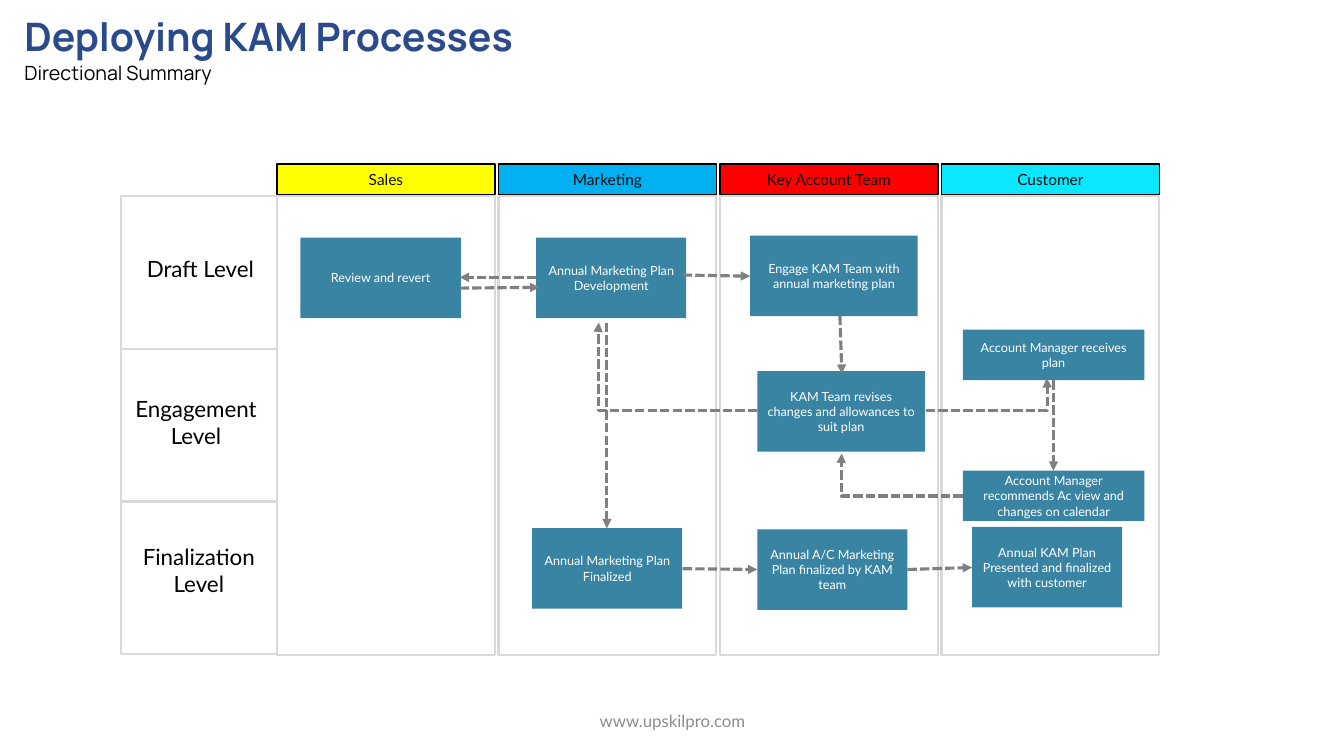
from lxml.etree import SubElement
from pptx import Presentation
from pptx.dml.color import RGBColor
from pptx.enum.dml import MSO_LINE
from pptx.enum.shapes import MSO_CONNECTOR as Connector, MSO_SHAPE as Shape
from pptx.enum.text import MSO_ANCHOR as Anchor, PP_ALIGN as Align
from pptx.oxml.ns import qn
from pptx.util import Cm, Pt

COLORS = {
    "title": "2A4A8B", "black": "000000", "white": "FFFFFF",
    "header_text": "0D0D0D", "footer": "8C8C8C", "grid": "D9D9D9",
    "step": "3984A3", "arrow": "808080", "yellow": "FFFF00",
    "blue": "00B0F0", "red": "FF0000", "cyan": "0AE7FE",
}

LANES = [("Sales", "yellow"), ("Marketing", "blue"),
         ("Key Account Team", "red"), ("Customer", "cyan")]
LANE_LEFT, LANE_PITCH, LANE_WIDTH = 6.98, 5.58, 5.49
LEVEL_LEFT, LEVEL_TOP, LEVEL_PITCH = 3.05, 4.95, 3.85

# Text, then left, top, width, height
LEVELS = [
    ("Draft Level", 3.12, 6.3, 3.86, 0.94),
    ("Engagement Level", 3.05, 9.83, 3.78, 1.63),
    ("Finalization Level", 3.12, 13.56, 3.78, 1.63),
]
STEPS = [
    ("Review and revert", 7.57, 5.99, 4.04, 2.03),
    ("Annual Marketing Plan Development", 13.51, 5.99, 3.78, 2.03),
    ("Engage KAM Team with annual marketing plan", 18.9, 5.94, 4.22, 2.03),
    ("Account Manager receives plan", 24.26, 8.31, 4.57, 1.27),
    ("Account Manager recommends Ac view and changes on calendar",
     24.26, 11.86, 4.57, 1.27),
    ("KAM Team revises changes and allowances to suit plan",
     19.08, 9.35, 4.22, 2.03),
    ("Annual Marketing Plan Finalized", 13.41, 13.31, 3.78, 2.03),
    ("Annual A/C Marketing Plan finalized by KAM team",
     19.08, 13.34, 3.78, 2.03),
    ("Annual KAM Plan Presented and finalized with customer",
     24.49, 13.28, 3.78, 2.03),
]

# Start x, start y, end x, end y
STRAIGHT_ARROWS = [
    (17.2, 6.93, 18.9, 6.96),
    (13.51, 6.99, 11.58, 6.99),
    (11.58, 7.26, 13.59, 7.24),
    (21.16, 7.95, 21.21, 9.42),
    (26.54, 9.58, 26.54, 11.86),
    (15.29, 8.13, 15.29, 13.31),
    (17.2, 14.33, 19.08, 14.35),
    (22.86, 14.35, 24.49, 14.3),
]
BENT_ARROWS = [
    (24.26, 12.5, 21.21, 11.43),
    (19.08, 10.34, 15.09, 8.13),
    (23.32, 10.34, 26.37, 9.53),
]


def rgb(name):
    return RGBColor.from_string(COLORS[name])


class SlideBuilder:
    def __init__(self, slide, font="Lato", title_font="Manrope"):
        self.slide = slide
        self.font = font
        self.title_font = title_font

    def style(self, para, font, size, color, align, bold=False):
        para.alignment = align
        para.font.name = font
        para.font.size = Pt(size)
        para.font.bold = bold
        para.font.color.rgb = rgb(color)

    def title(self, heading, subtitle, left, top, width, height):
        box = self.slide.shapes.title
        box.left, box.top, box.width, box.height = map(
            Cm, (left, top, width, height))
        frame = box.text_frame
        frame.word_wrap = True
        frame.vertical_anchor = Anchor.TOP
        frame.text = f"{heading}\n{subtitle}"
        first, second = frame.paragraphs
        self.style(first, self.title_font, 28, "title", Align.LEFT, bold=True)
        self.style(second, self.title_font, 14, "black", Align.LEFT)
        first.line_spacing = 1.0
        second.line_spacing = 1.07
        second.space_before = Pt(0)

    def fill_text(self, box, text, size, color, anchor):
        frame = box.text_frame
        frame.word_wrap = True
        frame.vertical_anchor = anchor
        frame.text = text
        self.style(frame.paragraphs[0], self.font, size, color, Align.CENTER)

    def label(self, text, place, size, color, anchor=Anchor.TOP):
        box = self.slide.shapes.add_textbox(*map(Cm, place))
        self.fill_text(box, text, size, color, anchor)

    def rectangle(self, place, fill=None, line=None, line_width=1.0):
        box = self.slide.shapes.add_shape(Shape.RECTANGLE, *map(Cm, place))
        box.shadow.inherit = False
        if fill:
            box.fill.solid()
            box.fill.fore_color.rgb = rgb(fill)
        else:
            box.fill.background()
        if line:
            box.line.color.rgb = rgb(line)
            box.line.width = Pt(line_width)
        else:
            box.line.fill.background()
        return box

    def grid_cell(self, place):
        self.rectangle(place, line="grid", line_width=1.5)

    def header(self, text, fill, place):
        box = self.rectangle(place, fill, "black")
        self.fill_text(box, text, 11, "header_text", Anchor.MIDDLE)

    def step(self, text, place):
        box = self.rectangle(place, "step")
        self.fill_text(box, text, 9, "white", Anchor.MIDDLE)

    def arrow(self, ends, bent=False):
        """Draw a dashed arrow; a bent one runs across, then turns up."""
        kind = Connector.ELBOW if bent else Connector.STRAIGHT
        arrow = self.slide.shapes.add_connector(kind, *map(Cm, ends))
        arrow.line.color.rgb = rgb("arrow")
        arrow.line.width = Pt(2.25)
        arrow.line.dash_style = MSO_LINE.SQUARE_DOT
        properties = arrow.element.spPr
        SubElement(properties.find(qn("a:ln")), qn("a:tailEnd"),
                   type="triangle")
        SubElement(properties, qn("a:effectLst"))
        if bent:
            adjustments = properties.find(qn("a:prstGeom")).find(qn("a:avLst"))
            SubElement(adjustments, qn("a:gd"), name="adj1", fmla="val 100500")


def main():
    deck = Presentation()
    deck.slide_width, deck.slide_height = Cm(33.86), Cm(19.05)
    page = SlideBuilder(deck.slides.add_slide(deck.slide_layouts[5]))

    page.title("Deploying KAM Processes", "Directional Summary",
               0.36, 0.18, 17.8, 2.24)
    page.label("www.upskilpro.com", (11.23, 17.65, 11.43, 1.02), 12, "footer",
               Anchor.MIDDLE)

    for index, (name, fill) in enumerate(LANES):
        left = LANE_LEFT + index * LANE_PITCH
        page.header(name, fill, (left, 4.13, LANE_WIDTH, 0.78))
        page.grid_cell((left, 4.93, LANE_WIDTH, 11.58))

    for index, (name, *place) in enumerate(LEVELS):
        top = LEVEL_TOP + index * LEVEL_PITCH
        page.grid_cell((LEVEL_LEFT, top, 3.94, 3.84))
        page.label(name, place, 16, "black")

    for text, *place in STEPS:
        page.step(text, place)
    for ends in STRAIGHT_ARROWS:
        page.arrow(ends)
    for ends in BENT_ARROWS:
        page.arrow(ends, bent=True)

    deck.save("out.pptx")


if __name__ == "__main__":
    main()
